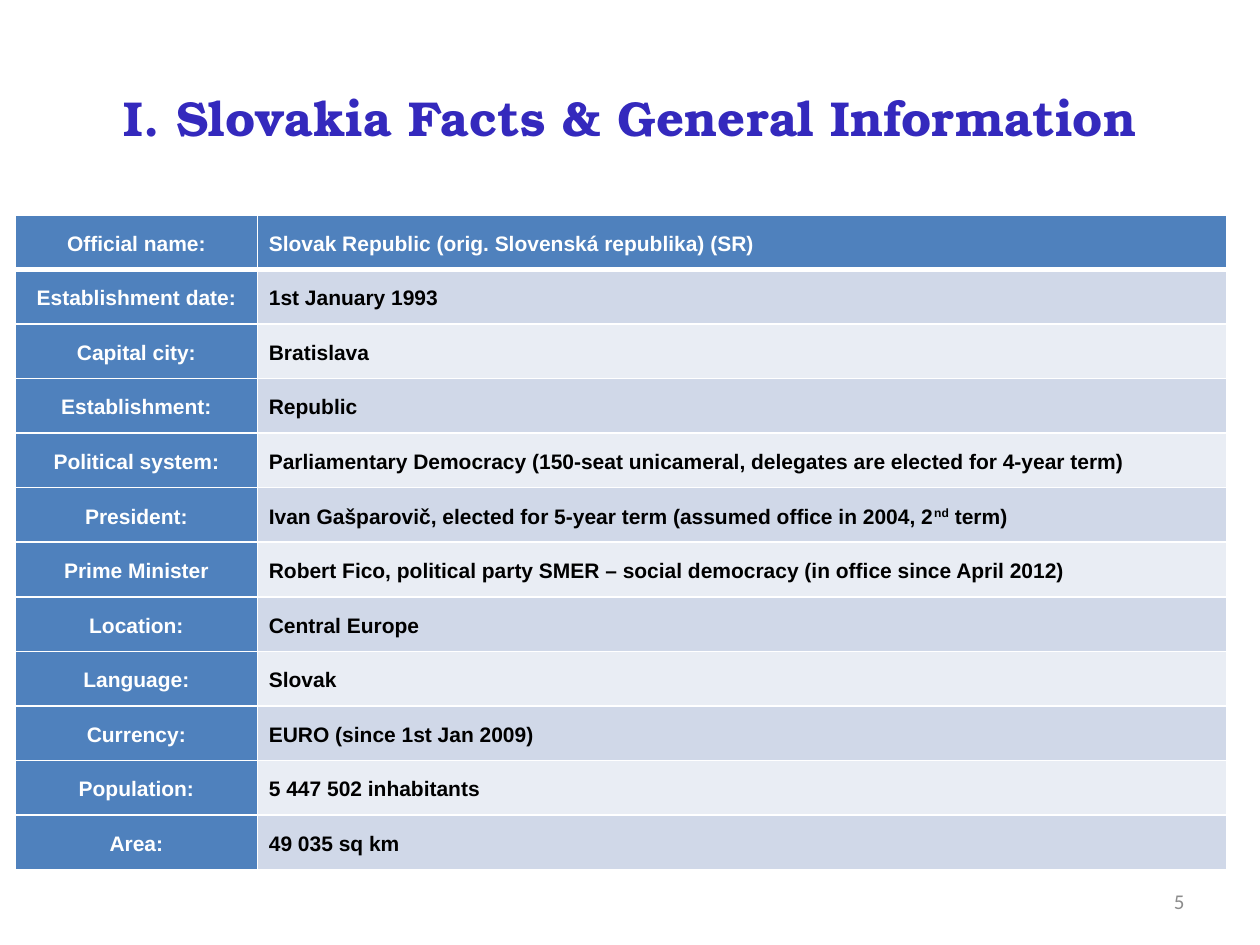
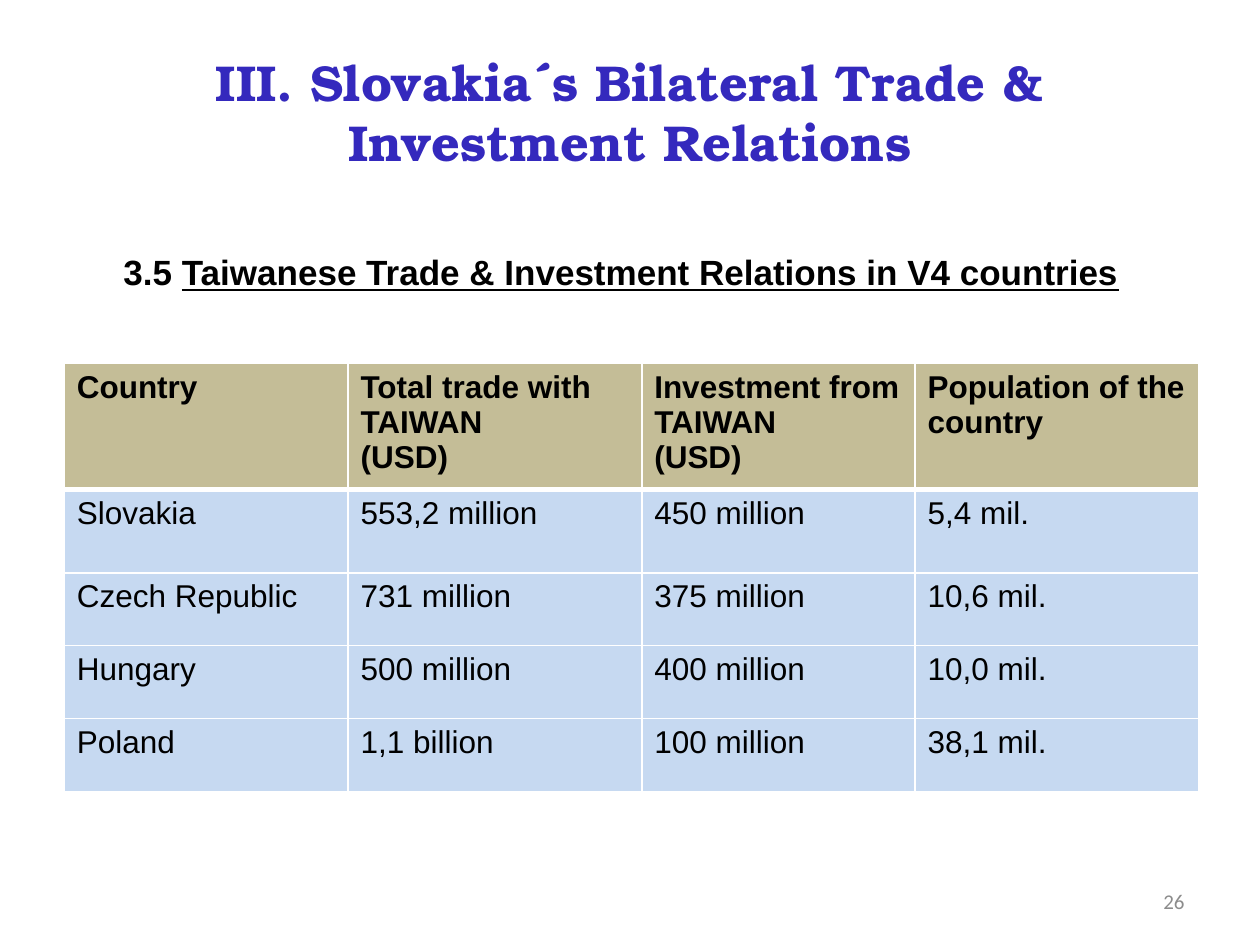
from dataclasses import dataclass

from lxml import etree
from pptx import Presentation
from pptx.dml.color import RGBColor
from pptx.enum.text import MSO_ANCHOR, PP_ALIGN
from pptx.oxml.ns import qn
from pptx.util import Cm, Pt

LEFT, CENTER, RIGHT = PP_ALIGN.LEFT, PP_ALIGN.CENTER, PP_ALIGN.RIGHT
TOP, MIDDLE = MSO_ANCHOR.TOP, MSO_ANCHOR.MIDDLE


@dataclass(frozen=True)
class Theme:
    title_font: str = "TeX Gyre Bonum"
    body_font: str = "Arial"
    number_font: str = "Calibri"
    indigo: str = "3429BD"
    black: str = "000000"
    white: str = "FFFFFF"
    grey: str = "8C8C8C"
    blue: str = "4F81BD"
    bands: tuple = ("E9EDF4", "D0D8E8")
    khaki: str = "C4BD97"
    sky: str = "C6D9F1"
    title_size: float = 28
    subtitle_size: float = 20
    cell_size: float = 18
    small_size: float = 12
    thin: float = 1
    thick: float = 3


THEME = Theme()


def write(tf, runs, size, color=THEME.black, font=THEME.body_font, bold=False,
          align=LEFT, anchor=TOP, before=0, after=0, spacing=None):
    """Write one paragraph; runs is a string or a list of (text, extras)."""
    tf.word_wrap = True
    tf.vertical_anchor = anchor
    p = tf.paragraphs[0]
    p.alignment = align
    p.space_before, p.space_after = Pt(before), Pt(after)
    p.line_spacing = spacing
    if isinstance(runs, str):
        runs = [(runs, {})]
    for text, extras in runs:
        for i, line in enumerate(text.split("\n")):
            if i:
                p.add_line_break()
            r = p.add_run()
            r.text = line
            r.font.name, r.font.size, r.font.bold = font, Pt(size), bold
            r.font.color.rgb = RGBColor.from_string(color)
            r.font.underline = extras.get("underline")
            if "baseline" in extras:
                r.font._element.set("baseline", str(extras["baseline"] * 1000))


def set_borders(cell, color, **widths):
    """Draw the sides of a cell; call before the fill is set."""
    tc_pr = cell._tc.get_or_add_tcPr()
    for side in "LRTB":
        ln = etree.SubElement(tc_pr, qn(f"a:ln{side}"), w=str(Pt(widths[side])))
        fill = etree.SubElement(ln, qn("a:solidFill"))
        etree.SubElement(fill, qn("a:srgbClr"), val=color)


class Deck:
    def __init__(self, theme):
        self.theme = theme
        self.prs = Presentation()
        self.prs.slide_width, self.prs.slide_height = Cm(25.4), Cm(19.05)
        self.s = None

    def text(self, left, top, width, height, runs, **fmt):
        sp = self.s.shapes.add_textbox(Cm(left), Cm(top), Cm(width), Cm(height))
        write(sp.text_frame, runs, **fmt)

    def slide(self, title, number, title_size=None, title_height=3.18):
        """Start a slide with its title and page number."""
        t = self.theme
        self.s = self.prs.slides.add_slide(self.prs.slide_layouts[6])
        self.text(1.27, 0.76, 22.86, title_height, title,
                  size=title_size or t.title_size, color=t.indigo,
                  font=t.title_font, bold=True, align=CENTER, anchor=MIDDLE)
        self.text(18.2, 17.66, 5.93, 1.01, str(number), size=t.small_size,
                  color=t.grey, font=t.number_font, align=RIGHT, anchor=MIDDLE)

    def subtitle(self, runs):
        self.text(1.09, 4.93, 22.86, 12.09, runs, size=self.theme.subtitle_size,
                  bold=True, align=CENTER, before=4)

    def table(self, left, top, widths, heights, rows, style):
        """Add a table; style(row, column) gives fill, margins and text format."""
        t = self.theme
        table = self.s.shapes.add_table(
            len(rows), len(widths), Cm(left), Cm(top),
            Cm(sum(widths)), Cm(sum(heights))).table
        table.horz_banding = False
        for column, width in zip(table.columns, widths):
            column.width = Cm(width)
        for i, (row, height) in enumerate(zip(rows, heights)):
            table.rows[i].height = Cm(height)
            for j, value in enumerate(row):
                cell = table.cell(i, j)
                fill, margins, fmt = style(i, j)
                set_borders(cell, t.white, L=t.thin, R=t.thin,
                            T=t.thick if i == 1 else t.thin,
                            B=t.thick if i == 0 else t.thin)
                cell.fill.solid()
                cell.fill.fore_color.rgb = RGBColor.from_string(fill)
                (cell.margin_left, cell.margin_right,
                 cell.margin_top, cell.margin_bottom) = map(Cm, margins)
                write(cell.text_frame, value, **fmt)
                cell.vertical_anchor = fmt.get("anchor", TOP)


def fact_style(i, j):
    """Blue header row and label column, banded values."""
    label = j == 0
    strong = label or i == 0
    fmt = dict(size=THEME.small_size, bold=True, anchor=MIDDLE,
               color=THEME.white if strong else THEME.black,
               align=CENTER if label else LEFT, after=10, spacing=1.15)
    fill = THEME.blue if strong else THEME.bands[i % 2]
    return fill, (0 if label else 0.23, 0, 0, 0), fmt


def trade_style(i, j):
    """Khaki header row over plain sky rows."""
    fmt = dict(size=THEME.cell_size, bold=i == 0)
    return THEME.sky if i else THEME.khaki, (0.25, 0.25, 0.13, 0.13), fmt


FACTS = [
    ("Official name:", "Slovak Republic (orig. Slovenská republika) (SR)"),
    ("Establishment date:", "1st January 1993"),
    ("Capital city:", "Bratislava"),
    ("Establishment:", "Republic"),
    ("Political system:", "Parliamentary Democracy (150-seat unicameral, "
                          "delegates are elected for 4-year term)"),
    ("President:", [("Ivan Gašparovič, elected for 5-year term "
                     "(assumed office in 2004, 2", {}),
                    ("nd", {"baseline": 30}), (" term)", {})]),
    ("Prime Minister", "Robert Fico, political party SMER – social democracy "
                       "(in office since April 2012)"),
    ("Location:", "Central Europe"),
    ("Language:", "Slovak"),
    ("Currency:", "EURO (since 1st Jan 2009)"),
    ("Population:", "5 447 502 inhabitants"),
    ("Area:", "49 035 sq km"),
]

TRADE = [
    ("Country", "Total trade with TAIWAN\n(USD)",
     "Investment from TAIWAN\n(USD)", "Population of the country"),
    ("Slovakia", "553,2 million", "450 million", "5,4 mil."),
    ("Czech Republic", "731 million", "375 million", "10,6 mil."),
    ("Hungary", "500 million", "400 million", "10,0 mil."),
    ("Poland", "1,1 billion", "100 million", "38,1 mil."),
]


def main():
    deck = Deck(THEME)

    # Country facts
    deck.slide("I. Slovakia Facts & General Information", 5)
    deck.table(0.31, 4.33, [4.88, 19.53], [1.1] * len(FACTS), FACTS, fact_style)

    # Trade and investment in the V4 countries
    deck.slide("III. Slovakia´s Bilateral Trade & Investment Relations", 26,
               title_size=28.8, title_height=2.97)
    deck.subtitle([("3.5 ", {}),
                   ("Taiwanese Trade & Investment Relations in V4 countries",
                    {"underline": True})])
    deck.table(1.3, 7.32, [5.72, 5.92, 5.51, 5.72], [2.51, 1.68] + [1.47] * 3,
               TRADE, trade_style)

    deck.prs.save("out.pptx")


if __name__ == "__main__":
    main()
